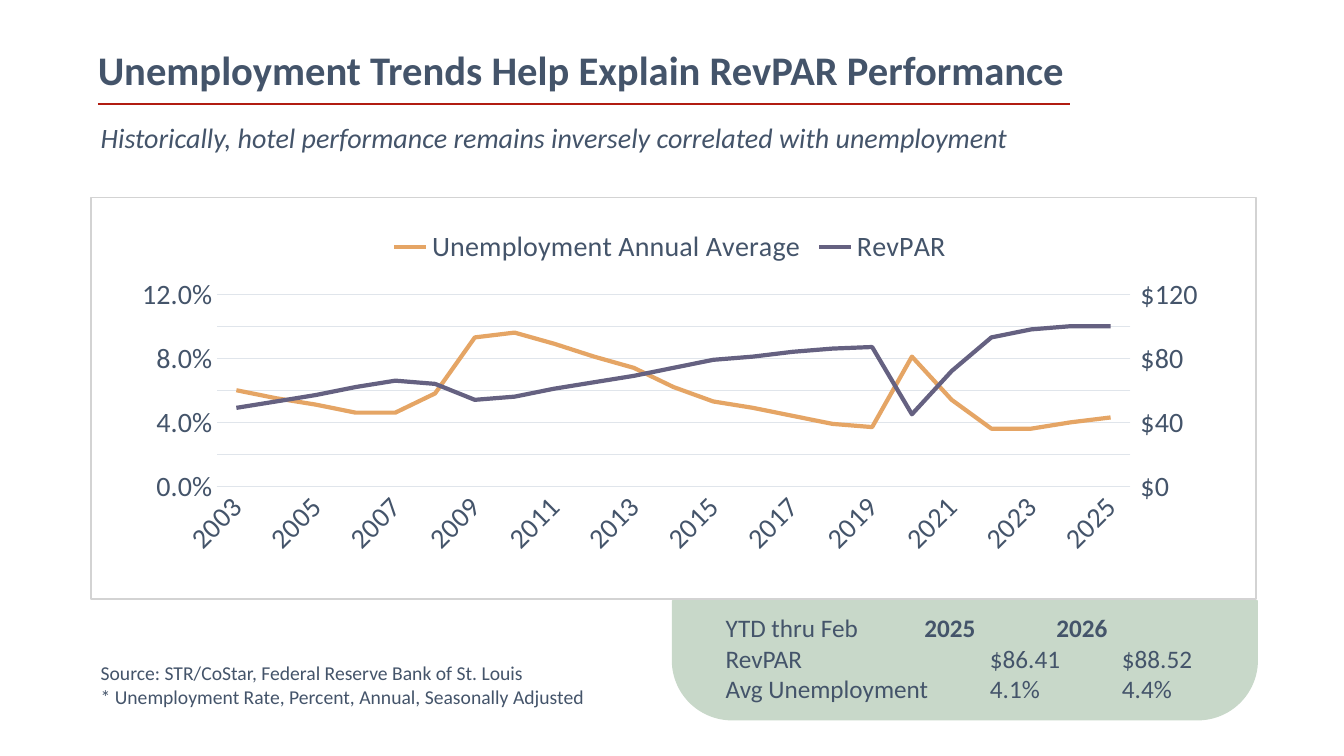
from copy import deepcopy

from lxml.etree import SubElement
from pptx import Presentation
from pptx.chart.axis import ValueAxis
from pptx.chart.data import CategoryChartData
from pptx.dml.color import RGBColor
from pptx.enum.chart import XL_CHART_TYPE as ChartType
from pptx.enum.chart import XL_LEGEND_POSITION as LegendPosition
from pptx.enum.chart import XL_TICK_MARK as TickMark
from pptx.enum.shapes import MSO_CONNECTOR as Connector
from pptx.enum.shapes import MSO_SHAPE as Shape
from pptx.enum.text import MSO_ANCHOR as Anchor
from pptx.enum.text import MSO_AUTO_SIZE as AutoSize
from pptx.enum.text import PP_ALIGN as Align
from pptx.oxml.ns import qn
from pptx.util import Inches, Pt

FONT = "Calibri"
COLORS = {
    "text": "44546A", "rule": "B11C11", "border": "D3D3D3", "card": "C8D8C9",
    "grid": "E0E5EB", "unemployment": "E5A565", "revpar": "656181",
}
YEARS = [str(year) for year in range(2003, 2026)]
UNEMPLOYMENT = [
    0.06, 0.055, 0.051, 0.046, 0.046, 0.058, 0.093, 0.096, 0.089, 0.081, 0.074, 0.062,
    0.053, 0.049, 0.044, 0.039, 0.037, 0.081, 0.054, 0.036, 0.036, 0.04, 0.043,
]
REVPAR = [
    49, 53, 57, 62, 66, 64, 54, 56, 61, 65, 69, 74,
    79, 81, 84, 86, 87, 45, 72, 93, 98, 100, 100,
]
# Label, values, and tab stops in inches
YTD_ROWS = [
    ("YTD thru Feb", ("2025", "2026"), (1.97, 3.28)),
    ("RevPAR", ("$86.41", "$88.52"), (2.62, 3.93)),
    ("Avg Unemployment", ("4.1%", "4.4%"), (2.62, 3.93)),
]


def color(name):
    return RGBColor.from_string(COLORS[name])


def box(left, top, width, height):
    return Inches(left), Inches(top), Inches(width), Inches(height)


def style_font(font, size, bold=False, italic=False):
    font.name, font.size = FONT, Pt(size)
    font.bold, font.italic = bold, italic
    font.color.rgb = color("text")


def style_line(line, name, width):
    line.color.rgb = color(name)
    line.width = Pt(width)


def add_text_box(slide, place, text, size, italic=False, anchor=Anchor.TOP):
    frame = slide.shapes.add_textbox(*box(*place)).text_frame
    frame.word_wrap = True
    frame.vertical_anchor = anchor
    paragraph = frame.paragraphs[0]
    paragraph.text = text
    for run in paragraph.runs:
        style_font(run.font, size, italic=italic)
    return frame


def add_panel(slide, kind, place, line, width, fill=None):
    panel = slide.shapes.add_shape(kind, *box(*place))
    panel.shadow.inherit = False
    style_line(panel.line, line, width)
    if fill:
        panel.fill.solid()
        panel.fill.fore_color.rgb = color(fill)
    else:
        panel.fill.background()
    return panel


def add_title(slide, text):
    title = slide.shapes.title
    title.left, title.top, title.width, title.height = box(0.81, 0.22, 10.02, 0.76)
    frame = title.text_frame
    frame.text = text
    frame.auto_size = AutoSize.NONE
    frame.vertical_anchor = Anchor.TOP
    frame.margin_left = frame.margin_right = Inches(0.1)
    frame.margin_top = frame.margin_bottom = Inches(0.1)
    paragraph = frame.paragraphs[0]
    paragraph.alignment = Align.LEFT
    paragraph.line_spacing = 1.25
    properties = paragraph._p.get_or_add_pPr()
    properties.set("marL", str(Inches(0.06)))
    properties.set("indent", "0")
    style_font(paragraph.runs[0].font, 29, bold=True)


def add_rule(slide):
    rule = slide.shapes.add_connector(
        Connector.STRAIGHT, Inches(0.97), Inches(1.03), Inches(10.61), Inches(1.03))
    style_line(rule.line, "rule", 1)
    SubElement(rule._element.spPr, qn("a:effectLst"))


def add_ytd_rows(slide):
    frame = add_text_box(slide, (7.1, 6.03, 5.37, 1.01), "", 18)
    for index, (label, values, stops) in enumerate(YTD_ROWS):
        paragraph = frame.add_paragraph() if index else frame.paragraphs[0]
        tabs = SubElement(paragraph._p.get_or_add_pPr(), qn("a:tabLst"))
        for stop in stops:
            SubElement(tabs, qn("a:tab"), pos=str(Inches(stop)), algn="l")
        for text, bold in ((label + "\t", False), ("\t".join(values), index == 0)):
            run = paragraph.add_run()
            run.text = text
            style_font(run.font, 18, bold=bold)


def scale_axis(axis, maximum, step, number_format):
    axis.minimum_scale, axis.maximum_scale, axis.major_unit = 0, maximum, step
    axis.tick_labels.number_format = number_format
    axis.tick_labels.number_format_is_linked = False


def move_to_right_axis(chart):
    """Plot the last series against its own value axis on the right."""
    plot_area = chart._chartSpace.chart.plotArea
    left_plot = plot_area.find(qn("c:lineChart"))
    right_plot = deepcopy(left_plot)
    left_plot.remove(left_plot.findall(qn("c:ser"))[-1])
    right_plot.remove(right_plot.find(qn("c:ser")))
    left_plot.addnext(right_plot)

    category = deepcopy(chart.category_axis._element)
    value = deepcopy(chart.value_axis._element)
    for reference, number in zip(right_plot.findall(qn("c:axId")), ("5001", "5002")):
        reference.set("val", number)
    for axis, own, other in ((category, "5001", "5002"), (value, "5002", "5001")):
        axis.find(qn("c:axId")).set("val", own)
        axis.find(qn("c:crossAx")).set("val", other)
    category.find(qn("c:delete")).set("val", "1")
    value.find(qn("c:axPos")).set("val", "r")
    value.find(qn("c:crosses")).set("val", "max")
    chart.value_axis._element.addnext(value)
    value.addnext(category)

    right_axis = ValueAxis(value)
    right_axis.has_major_gridlines = False
    right_axis.major_tick_mark = TickMark.OUTSIDE
    scale_axis(right_axis, 120, 20, '"$"#,##0')


def add_trend_chart(slide):
    data = CategoryChartData()
    data.categories = YEARS
    data.add_series("Unemployment Annual Average", UNEMPLOYMENT, "0.0%")
    data.add_series("RevPAR", REVPAR, '"$"#,##0')
    chart = slide.shapes.add_chart(ChartType.LINE, *box(1.19, 2.15, 10.91, 3.43), data).chart
    chart.has_title = False
    style_font(chart.font, 20)
    chart.has_legend = True
    chart.legend.position = LegendPosition.TOP
    chart.legend.include_in_layout = False
    style_font(chart.legend.font, 20)

    plot = chart.plots[0]
    plot.vary_by_categories = False
    for series, name in zip(plot.series, ("unemployment", "revpar")):
        series.smooth = False
        style_line(series.format.line, name, 3)

    for axis in (chart.category_axis, chart.value_axis):
        axis.major_tick_mark = axis.minor_tick_mark = TickMark.NONE
        style_font(axis.tick_labels.font, 20)
    style_line(chart.category_axis.format.line, "grid", 0.75)
    label_body = chart.category_axis._element.find(qn("c:txPr")).find(qn("a:bodyPr"))
    label_body.set("rot", "-2700000")
    chart.value_axis.format.line.fill.background()
    chart.value_axis.has_major_gridlines = True
    style_line(chart.value_axis.major_gridlines.format.line, "grid", 0.75)
    scale_axis(chart.value_axis, 0.12, 0.02, "0.0%")
    move_to_right_axis(chart)


def main():
    presentation = Presentation()
    presentation.slide_width, presentation.slide_height = Inches(13.33), Inches(7.5)
    slide = presentation.slides.add_slide(presentation.slide_layouts[5])

    add_title(slide, "Unemployment Trends Help Explain RevPAR Performance")
    add_rule(slide)
    subtitle = add_text_box(
        slide, (0.9, 1.06, 11.2, 0.65),
        "Historically, hotel performance remains inversely correlated with unemployment",
        20, italic=True, anchor=Anchor.MIDDLE)
    subtitle.paragraphs[0].line_spacing = 0.9
    add_text_box(
        slide, (0.9, 6.51, 5.5, 0.57),
        "Source: STR/CoStar, Federal Reserve Bank of St. Louis\n"
        "* Unemployment Rate, Percent, Annual, Seasonally Adjusted", 14)
    add_panel(slide, Shape.RECTANGLE, (0.9, 1.96, 11.56, 3.98), "border", 1.25)
    card = add_panel(
        slide, Shape.ROUND_2_SAME_RECTANGLE, (6.67, 5.96, 5.8, 1.18), "card", 1, fill="card")
    card.adjustments[0], card.adjustments[1] = 0, 0.5
    add_ytd_rows(slide)
    add_trend_chart(slide)
    presentation.save("out.pptx")


if __name__ == "__main__":
    main()
